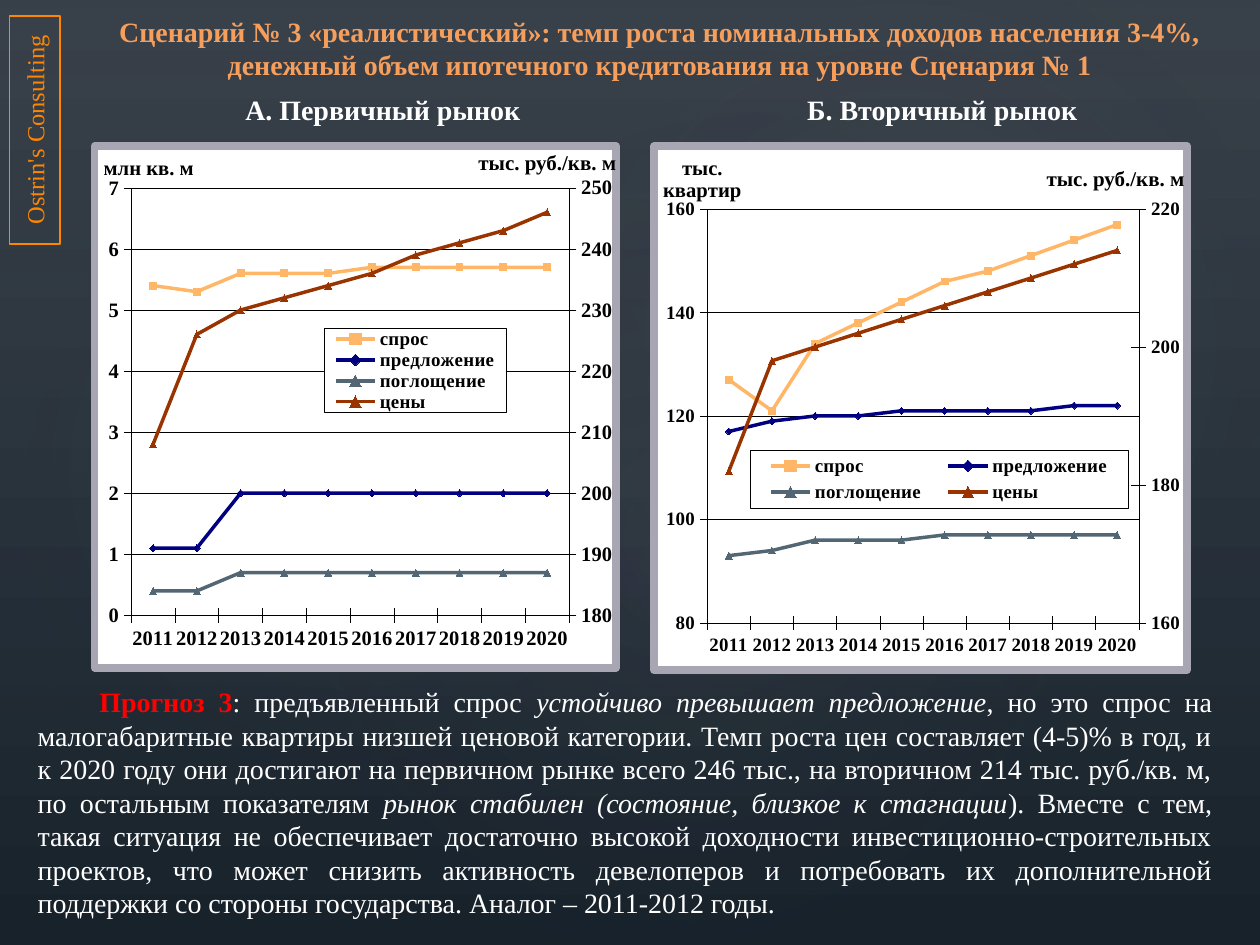
import copy
import pptx
import pptx.util
import pptx.chart.axis
import pptx.chart.data
import pptx.dml.color
import pptx.enum.chart
import pptx.enum.shapes
import pptx.enum.text
from lxml import etree
from pptx.oxml.ns import qn

HUES = {"top": "394650", "base": "17212A", "veil": "38363E", "deep": "283138",
        "glow": "A8A6B2", "head": "F69E5C", "logo": "FF8600", "red": "FF0000",
        "white": "FFFFFF", "black": "000000", "sand": "FFB666", "navy": "000080",
        "slate": "536674", "rust": "993300", "wine": "800000"}
FACE = "Times New Roman"
YEARS = [str(year) for year in range(2011, 2021)]
ALIGN = pptx.enum.text.PP_ALIGN
MARK = pptx.enum.chart.XL_MARKER_STYLE
LINES = [("спрос", "sand", "sand", MARK.SQUARE),
         ("предложение", "navy", "navy", MARK.DIAMOND),
         ("поглощение", "slate", "slate", MARK.TRIANGLE),
         ("цены", "rust", "wine", MARK.TRIANGLE)]


def hue(name):
    return pptx.dml.color.RGBColor.from_string(HUES[name])


def style(font, size, color="black", bold=True, italic=False):
    font.name, font.size = FACE, pptx.util.Pt(size)
    font.bold, font.italic = bold, italic
    font.color.rgb = hue(color)


def write(frame, parts, size=16, color="white", align=ALIGN.JUSTIFY, indent=0, tabs=()):
    """Fill a frame with one paragraph of (text, format) parts."""
    frame.word_wrap = True
    frame.vertical_anchor = pptx.enum.text.MSO_ANCHOR.MIDDLE
    para = frame.paragraphs[0]
    para.alignment = align
    props = para._p.get_or_add_pPr()
    if indent:
        props.set("indent", str(pptx.util.Inches(indent)))
    if tabs:
        stops = etree.SubElement(props, qn("a:tabLst"))
        for spot in tabs:
            etree.SubElement(stops, qn("a:tab"), pos=str(pptx.util.Inches(spot)), algn="ctr")
    for text, form in parts:
        run = para.add_run()
        run.text = text
        style(run.font, size, **{"color": color, "bold": False, **form})


def blend(fill, stops):
    fill.gradient()
    for stop, (spot, name) in zip(fill.gradient_stops, stops):
        stop.position = spot
        stop.color.rgb = hue(name)


def border(line, width):
    """White chart area with a solid outline."""
    props = etree.Element(qn("c:spPr"))
    edge = etree.Element(qn("a:ln"), w=str(pptx.util.Pt(width)))
    for part, name in ((props, "white"), (edge, line)):
        solid = etree.SubElement(part, qn("a:solidFill"))
        etree.SubElement(solid, qn("a:srgbClr"), val=HUES[name])
    props.append(edge)
    return props


def place(part, index, spot, inner=False):
    """Set a manual layout as shares of the chart."""
    for old in part.findall(qn("c:layout")):
        part.remove(old)
    layout = etree.Element(qn("c:layout"))
    manual = etree.SubElement(layout, qn("c:manualLayout"))
    if inner:
        etree.SubElement(manual, qn("c:layoutTarget"), val="inner")
    for key in ("xMode", "yMode"):
        etree.SubElement(manual, qn("c:" + key), val="edge")
    for key, share in zip("xywh", spot):
        etree.SubElement(manual, qn("c:" + key), val=str(share))
    part.insert(index, layout)


def scale(axis, span, size):
    axis.minimum_scale, axis.maximum_scale, axis.major_unit = span
    trim(axis, size)
    axis.tick_labels.number_format = "0"
    axis.tick_labels.number_format_is_linked = False


def label(axis, title):
    """Put a level title above the axis."""
    frame = axis.axis_title.text_frame
    frame.text = title
    for para in frame.paragraphs:
        style(para.runs[0].font, 12)
    frame._txBody.bodyPr.set("rot", "0")
    place(axis.axis_title._element, 1, (0.01, 0.01))


def trim(axis, size):
    axis.major_tick_mark = pptx.enum.chart.XL_TICK_MARK.CROSS
    axis.minor_tick_mark = pptx.enum.chart.XL_TICK_MARK.NONE
    style(axis.tick_labels.font, size)
    ink(axis.format.line, "black", 0.25)


def ink(line, name, width):
    line.color.rgb = hue(name)
    line.width = pptx.util.Pt(width)


def split(chart):
    """Move the last series to a second axis and return that axis."""
    area = chart._chartSpace.chart.plotArea
    first = area.find(qn("c:lineChart"))
    axes = [area.find(qn("c:" + tag)) for tag in ("catAx", "valAx")]
    second, *twins = [copy.deepcopy(part) for part in (first, *axes)]
    first.remove(first.findall(qn("c:ser"))[-1])
    for row in second.findall(qn("c:ser"))[:-1]:
        second.remove(row)
    first.addnext(second)
    axes[1].addnext(twins[0])
    twins[0].addnext(twins[1])
    fresh = {axis.find(qn("c:axId")).get("val"): str(9001 + n) for n, axis in enumerate(axes)}
    for part in (second, *twins):
        for node in part.iter(qn("c:axId"), qn("c:crossAx")):
            node.set("val", fresh[node.get("val")])
    cat, val = (pptx.chart.axis.CategoryAxis(twins[0]), pptx.chart.axis.ValueAxis(twins[1]))
    cat.visible = False
    val.has_major_gridlines = False
    twins[1].find(qn("c:crosses")).set("val", "max")
    return val


class Deck:
    """Current slide on a grid of 100 columns by 75 rows."""

    def __init__(self):
        self.show = pptx.Presentation()
        self.show.slide_width = pptx.util.Inches(10)
        self.show.slide_height = pptx.util.Inches(7.5)
        self.cell = self.show.slide_width / 100
        self.page = self.show.slides.add_slide(self.show.slide_layouts[6])

    def box(self, spot):
        return [round(side * self.cell) for side in spot]

    def back(self, *stops):
        fill = self.page.background.fill
        blend(fill, stops)
        fill.gradient_angle = 270

    def shape(self, kind, spot, turn=0):
        item = self.page.shapes.add_shape(kind, *self.box(spot))
        item.shadow.inherit = False
        item.rotation = turn
        return item

    def glow(self, kind, spot, stops, alphas, turn=0, ring=False):
        item = self.shape(kind, spot, turn)
        item.line.fill.background()
        blend(item.fill, stops)
        item.fill.gradient_angle = 270
        grad = item._element.spPr.find(qn("a:gradFill"))
        for stop, alpha in zip(grad.iter(qn("a:gs")), alphas):
            etree.SubElement(stop[0], qn("a:alpha"), val=str(alpha * 1000))
        if ring:
            disc = etree.Element(qn("a:path"), path="circle")
            etree.SubElement(disc, qn("a:fillToRect"), **dict.fromkeys("ltrb", "50000"))
            grad.replace(grad.find(qn("a:lin")), disc)

    def text(self, spot, parts, **form):
        write(self.page.shapes.add_textbox(*self.box(spot)).text_frame, parts, **form)

    def badge(self, spot, text):
        item = self.shape(pptx.enum.shapes.MSO_SHAPE.RECTANGLE, spot, 270)
        item.fill.background()
        ink(item.line, "logo", 1)
        write(item.text_frame, [(text, {})], size=14, color="logo", align=ALIGN.CENTER)

    def chart(self, spot, rows, plot, key, title, left, right, size):
        data = pptx.chart.data.CategoryChartData()
        data.categories = YEARS
        for (name, *_), row in zip(LINES, rows):
            data.add_series(name, row)
        kind = pptx.enum.chart.XL_CHART_TYPE.LINE_MARKERS
        chart = self.page.shapes.add_chart(kind, *self.box(spot), data).chart
        chart.has_title = False
        style(chart.font, 12)
        chart._chartSpace.chart.addnext(border("glow", 4.5))
        place(chart._chartSpace.chart.plotArea, 0, plot, True)
        # Series
        for row, (_, color, dot, mark) in zip(chart.plots[0].series, LINES):
            row.smooth = False
            ink(row.format.line, color, 2)
            row.marker.style, row.marker.size = mark, 4
            row.marker.format.fill.solid()
            row.marker.format.fill.fore_color.rgb = hue(dot)
            ink(row.marker.format.line, dot, 0.75)
        # Axes
        trim(chart.category_axis, size)
        ink(chart.value_axis.major_gridlines.format.line, "black", 0.25)
        scale(chart.value_axis, left, size)
        scale(split(chart), right, size)
        label(chart.value_axis, title)
        # Legend
        chart.has_legend = True
        legend = chart.legend
        legend.include_in_layout = False
        style(legend.font, 11)
        place(legend._element, 1, key)
        legend._element.find(qn("c:overlay")).addnext(border("black", 0.25))


def main():
    deck = Deck()
    # Backdrop
    deck.back((0, "top"), (1, "base"))
    forms = pptx.enum.shapes.MSO_SHAPE
    deck.glow(forms.RECTANGLE, (0, 0, 100, 75), [(0, "veil"), (1, "deep")], (36, 10))
    for spot, turn, alpha in (((15, 11.4, 79.2, 62.4), 328.7, 7),
                              ((-3, 12.8, 60.6, 49), 294.3, 8),
                              ((35.8, 1.3, 70.9, 52), 328.7, 8)):
        deck.glow(forms.OVAL, spot, [(0, "glow"), (0.58, "deep")], (alpha, 0), turn, True)
    # Title and forecast
    bold, slant = {"bold": True}, {"italic": True}
    deck.text((5.3, 0.6, 94.1, 6.4), [(
        "Сценарий № 3 «реалистический»: темп роста номинальных доходов населения 3-4%, "
        "денежный объем ипотечного кредитования на уровне Сценария № 1", bold)],
        color="head", align=ALIGN.CENTER)
    deck.text((2, 53.7, 95.2, 19.9), [
        ("Прогноз 3", {"bold": True, "color": "red"}),
        (": предъявленный спрос ", {}),
        ("устойчиво превышает предложение", slant),
        (", но это спрос на малогабаритные квартиры низшей ценовой категории. Темп роста цен "
         "составляет (4-5)% в год, и к 2020 году они достигают на первичном рынке всего 246 тыс., "
         "на вторичном 214 тыс. руб./кв. м, по остальным показателям ", {}),
        ("рынок стабилен (состояние, близкое к стагнации", slant),
        ("). Вместе с тем, такая ситуация не обеспечивает достаточно высокой доходности "
         "инвестиционно-строительных проектов, что может снизить активность девелоперов и "
         "потребовать их дополнительной поддержки со стороны государства. "
         "Аналог – 2011-2012 годы.", {})], indent=0.49)
    # Charts
    deck.chart((7.2, 11.3, 42, 42), [
        [5.4, 5.3, 5.6, 5.6, 5.6] + [5.7] * 5, [1.1] * 2 + [2] * 8, [0.4] * 2 + [0.7] * 8,
        [208, 226, 230, 232, 234, 236, 239, 241, 243, 246]],
        (0.07, 0.08, 0.84, 0.82), (0.44, 0.35, 0.35, 0.16),
        "млн кв. м", (0, 7, 1), (180, 250, 10), 11.9)
    deck.chart((51.6, 11.3, 42.9, 42.2), [
        [127, 121, 134, 138, 142, 146, 148, 151, 154, 157],
        [117, 119, 120, 120, 121, 121, 121, 121, 122, 122],
        [93, 94, 96, 96, 96] + [97] * 5, [182, *range(198, 215, 2)]],
        (0.1, 0.12, 0.81, 0.79), (0.18, 0.58, 0.71, 0.11),
        "тыс.\nквартир", (80, 160, 20), (160, 220, 20), 11)
    # Right axis captions
    for left, top in ((34.9, 11.5), (80, 12.7)):
        deck.text((left, top, 15, 2.8), [("тыс. руб./кв. м", bold)],
                  size=12, color="black", align=ALIGN.RIGHT)
    # Headings and badge
    deck.text((7.5, 6.8, 89.8, 3.7), [("\tА. Первичный рынок\tБ. Вторичный рынок", bold)],
              align=ALIGN.LEFT, tabs=(2.19, 6.63))
    deck.badge((-6.3, 8.3, 18.1, 4), "Ostrin's Consulting")
    deck.show.save("out.pptx")


if __name__ == "__main__":
    main()
